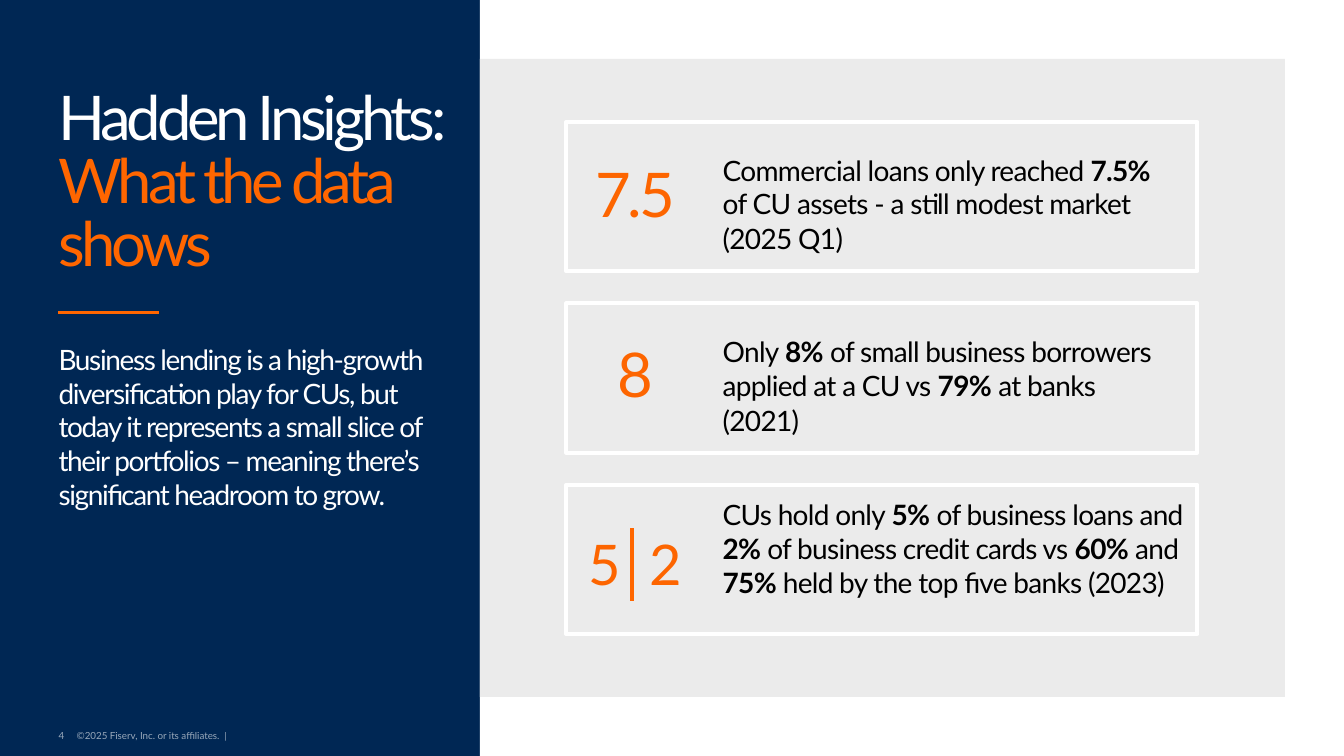
from lxml.etree import SubElement
from pptx import Presentation
from pptx.dml.color import RGBColor
from pptx.enum.shapes import MSO_CONNECTOR, MSO_SHAPE
from pptx.enum.text import MSO_ANCHOR
from pptx.oxml.ns import qn
from pptx.util import Pt

COLORS = {"navy": "002754", "white": "FFFFFF", "gray": "EBEBEB",
          "orange": "FF6600", "figure": "FD6500", "black": "000000"}
FONT = "Lato"

# A paragraph is a list of runs: (text, color) or (text, bold); "\n" breaks a line
TITLE = [("Hadden Insights: ", "white"), ("What the data", "orange"),
         ("\n", "orange"), ("shows", "orange")]
BODY = ("Business lending is a high-growth diversification play for CUs, but "
        "today it represents a small slice of their portfolios – meaning "
        "there’s significant headroom to grow.")
PAGE = "4"
RIGHTS = "©2025 Fiserv, Inc. or its affiliates.  |"

# figures: (text, left, drop in card, width, size)
CARDS = [
    {"figures": [("7.5", 425.5, 23.8, 79, 44)], "drop": 22.3, "width": 324.7,
     "text": [[("Commercial loans only reached ", False), ("7.5%", True),
               (" of CU assets - a still modest market", False)],
              [("(2025 Q1)", False)]]},
    {"figures": [("8", 441.4, 22.3, 35, 44)], "drop": 22.3, "width": 333.4,
     "text": [[("Only ", False), ("8%", True),
               (" of small business borrowers applied at a CU vs ", False),
               ("79%", True), (" at banks", False)],
              [("(2021)", False)]]},
    {"figures": [("5", 420.5, 31, 31, 40), ("2", 463.7, 31, 33, 40)],
     "drop": 9.4, "width": 333.4,
     "text": [[("CUs hold only ", False), ("5%", True),
               (" of business loans and ", False), ("2% ", True),
               ("of business credit cards vs ", False), ("60%", True),
               (" and ", False), ("75% ", True),
               ("held by the top five banks (2023)", False)]]},
]

MARGIN, COLUMN, RULE_Y = 41.8, 279.4, 223.2
SPLIT = 342.8
CARD_X, CARD_Y, CARD_W, CARD_H, PITCH = 404.6, 87.1, 450.7, 106.6, 129.6
TEXT_X = 516.2

deck = Presentation()
deck.slide_width, deck.slide_height = Pt(960), Pt(540)
slide = deck.slides.add_slide(deck.slide_layouts[6])


def rgb(name):
    return RGBColor.from_string(COLORS[name])


def add_rect(x, y, w, h, fill=None, line=None):
    rect = slide.shapes.add_shape(MSO_SHAPE.RECTANGLE, Pt(x), Pt(y), Pt(w), Pt(h))
    rect.shadow.inherit = False
    if fill:
        rect.fill.solid()
        rect.fill.fore_color.rgb = rgb(fill)
    else:
        rect.fill.background()
    if line:
        rect.line.color.rgb = rgb(line)
        rect.line.width = Pt(3)
    else:
        rect.line.fill.background()


def add_line(x1, y1, x2, y2, width):
    line = slide.shapes.add_connector(
        MSO_CONNECTOR.STRAIGHT, Pt(x1), Pt(y1), Pt(x2), Pt(y2))
    line.line.color.rgb = rgb("orange")
    line.line.width = Pt(width)
    SubElement(line._element.spPr, qn("a:effectLst"))


def add_box(x, y, w, h, top=0, right=0):
    """Add a wrapping text box with the given insets and return its frame."""
    frame = slide.shapes.add_textbox(Pt(x), Pt(y), Pt(w), Pt(h)).text_frame
    frame.word_wrap = True
    frame.margin_left = frame.margin_bottom = 0
    frame.margin_top, frame.margin_right = Pt(top), Pt(right)
    return frame


def add_run(para, text, size, color, track=0, bold=False, alpha=None):
    """Append a run; track is letter spacing in points, alpha a percentage."""
    run = para.add_run()
    run.text = text
    font = run.font
    font.name, font.size, font.bold = FONT, Pt(size), bold
    font.color.rgb = rgb(color)
    props = run._r.get_or_add_rPr()
    if track:
        props.set("spc", str(int(track * 100)))
    if alpha:
        tint = props.find(qn("a:solidFill"))[0]
        SubElement(tint, qn("a:alpha"), val=str(alpha * 1000))


def add_panels():
    back = slide.background.fill
    back.solid()
    back.fore_color.rgb = rgb("navy")
    add_rect(SPLIT, 0, 960 - SPLIT, 540, "white")
    add_rect(SPLIT, 42, 575, 455.8, "gray")


def add_intro():
    para = add_box(MARGIN, 61.2, COLUMN, 161.3, top=3.6).paragraphs[0]
    para.line_spacing = 0.85
    for text, color in TITLE:
        if text == "\n":
            para.add_line_break()
        else:
            add_run(para, text, 44, color, -3)
    add_line(MARGIN, RULE_Y, MARGIN + 72, RULE_Y, 2.25)
    body = add_box(MARGIN, RULE_Y, COLUMN, 170.6, top=21.6, right=7.2)
    add_run(body.paragraphs[0], BODY, 20, "white", -1)


def add_footer():
    for text, x, w in ((PAGE, MARGIN, 13), (RIGHTS, 54.8, 114.5)):
        frame = add_box(x, 521.3, w, 8.6)
        frame.vertical_anchor = MSO_ANCHOR.MIDDLE
        frame.word_wrap = False
        add_run(frame.paragraphs[0], text, 7, "white", alpha=60)


def add_card(y, card):
    add_rect(CARD_X, y, CARD_W, CARD_H, line="white")
    for text, x, drop, w, size in card["figures"]:
        frame = add_box(x, y + drop, w, 54, top=0.7)
        add_run(frame.paragraphs[0], text, size, "figure", -2.5)
    frame = add_box(TEXT_X, y + card["drop"], card["width"], 74)
    for i, runs in enumerate(card["text"]):
        para = frame.add_paragraph() if i else frame.paragraphs[0]
        if i:
            para.space_before = Pt(1)
        for text, bold in runs:
            add_run(para, text, 20, "black", -0.5, bold)


add_panels()
add_intro()
add_footer()
for row, card in enumerate(CARDS):
    add_card(CARD_Y + row * PITCH, card)
add_line(451.4, 429.1, 451.4, 377.3, 3)
deck.save("out.pptx")
